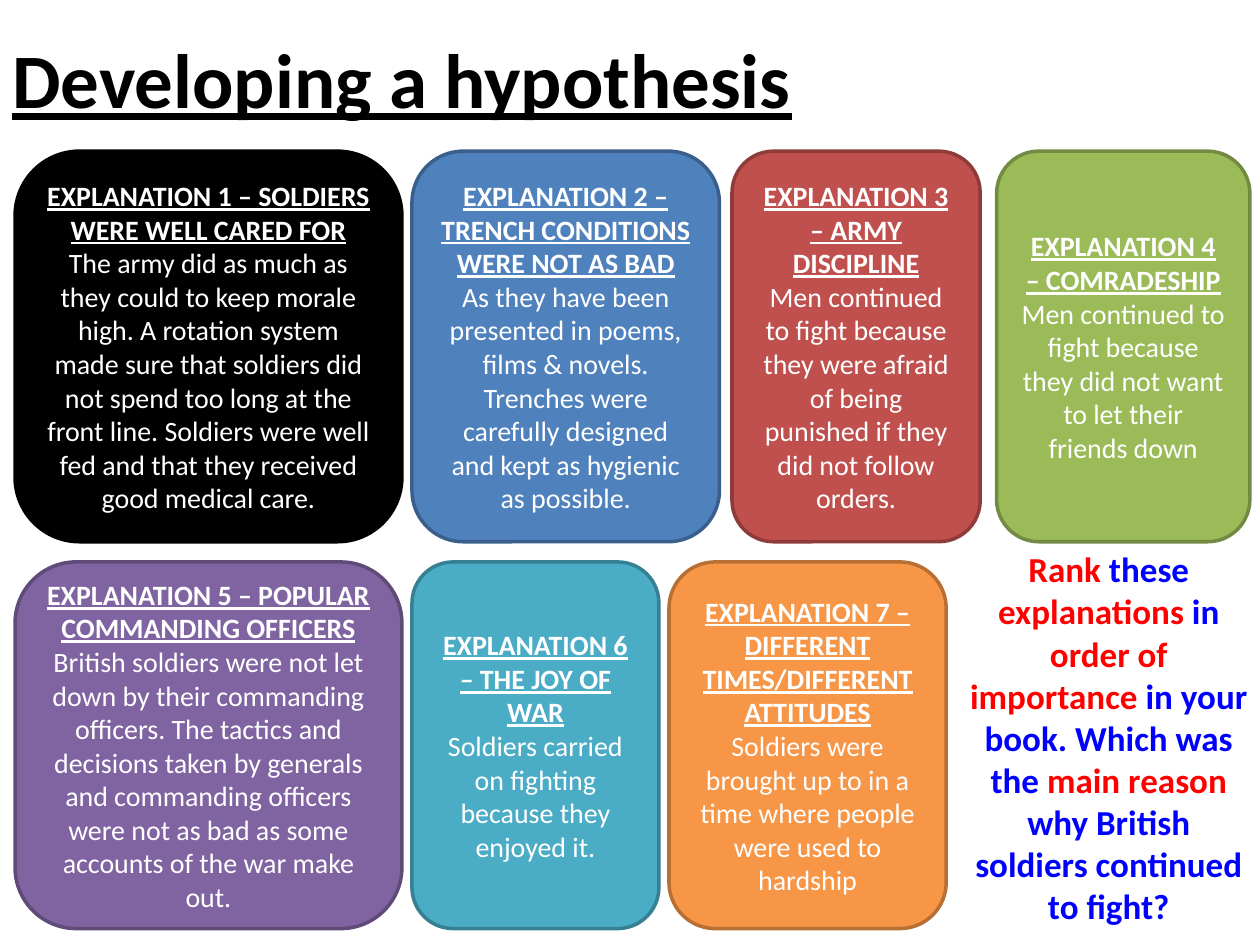
from pptx import Presentation
from pptx import util as u
from pptx.dml.color import RGBColor
from pptx.enum import shapes, text

COLUMNS, ROWS = 100, 75
COLOURS = {
    "black": "000000", "white": "FFFFFF", "red": "FF0000", "blue": "0000FF",
    "steel": "4F81BD", "steel edge": "3A5F8C",
    "brick": "C0504D", "brick edge": "8E3B39",
    "olive": "9BBB59", "olive edge": "738A42",
    "purple": "8064A2", "purple edge": "5F4A78",
    "teal": "4BACC6", "teal edge": "377F92",
    "orange": "F79646", "orange edge": "B76F34",
    "black edge": "000000",
}

# Each row: top, height, then cards of (left, width, colour, heading, body)
CARD_ROWS = [
    (12, 31, [
        (1.2, 30.7, "black", "EXPLANATION 1 – SOLDIERS WERE WELL CARED FOR",
         "The army did as much as they could to keep morale high. A rotation system made sure "
         "that soldiers did not spend too long at the front line. Soldiers were well fed and "
         "that they received good medical care."),
        (32.7, 24.4, "steel", "EXPLANATION 2 – TRENCH CONDITIONS WERE NOT AS BAD",
         "As they have been presented in poems, films & novels. Trenches were carefully "
         "designed and kept as hygienic as possible."),
        (58.1, 19.7, "brick", "EXPLANATION 3 – ARMY DISCIPLINE",
         "Men continued to fight because they were afraid of being punished if they did not "
         "follow orders."),
        (79.1, 20.1, "olive", "EXPLANATION 4 – COMRADESHIP",
         "Men continued to fight because they did not want to let their friends down"),
    ]),
    (44.6, 29.1, [
        (1.2, 30.7, "purple", "EXPLANATION 5 – POPULAR COMMANDING OFFICERS",
         "British soldiers were not let down by their commanding officers. The tactics and "
         "decisions taken by generals and commanding officers were not as bad as some "
         "accounts of the war make out."),
        (32.7, 19.6, "teal", "EXPLANATION 6 – THE JOY OF WAR",
         "Soldiers carried on fighting because they enjoyed it."),
        (53.1, 22, "orange", "EXPLANATION 7 – DIFFERENT TIMES/DIFFERENT ATTITUDES",
         "Soldiers were brought up to in a time where people were used to hardship"),
    ]),
]

TASK = [
    ("Rank", "red"), (" these ", "blue"), ("explanations", "red"), (" in ", "blue"),
    ("order of importance ", "red"), ("in your book. Which was the ", "blue"),
    ("main reason ", "red"), ("why British soldiers continued to fight?", "blue"),
]


def rgb(name):
    return RGBColor.from_string(COLOURS[name])


class Board:
    """Holds the style and the slide; lengths are grid columns and rows."""
    font = "Calibri"
    title_size, task_size, card_size = 44, 20, 16
    edge_width = 2

    def __init__(self, deck):
        self.column = deck.slide_width / COLUMNS
        self.row = deck.slide_height / ROWS
        self.slide = deck.slides.add_slide(deck.slide_layouts[6])

    def area(self, left, top, width, height):
        return (round(left * self.column), round(top * self.row),
                round(width * self.column), round(height * self.row))

    def run(self, paragraph, words, size, colour, bold=True, underline=False):
        run = paragraph.add_run()
        run.text = words
        font = run.font
        font.name, font.size = self.font, u.Pt(size)
        font.bold, font.underline = bold, underline
        font.color.rgb = rgb(colour)

    def text_frame(self, area, anchor):
        frame = self.slide.shapes.add_textbox(*self.area(*area)).text_frame
        frame.word_wrap = True
        frame.vertical_anchor = anchor
        return frame

    def title(self, area, words):
        frame = self.text_frame(area, text.MSO_ANCHOR.MIDDLE)
        self.run(frame.paragraphs[0], words, self.title_size, "black", underline=True)

    def task(self, area, parts):
        frame = self.text_frame(area, text.MSO_ANCHOR.TOP)
        frame.auto_size = text.MSO_AUTO_SIZE.SHAPE_TO_FIT_TEXT
        question = frame.paragraphs[0]
        question.alignment = text.PP_ALIGN.CENTER
        for words, colour in parts:
            self.run(question, words, self.task_size, colour)

    def card(self, area, colour, heading, body):
        card = self.slide.shapes.add_shape(
            shapes.MSO_SHAPE.ROUNDED_RECTANGLE, *self.area(*area))
        card.shadow.inherit = False
        card.fill.solid()
        card.fill.fore_color.rgb = rgb(colour)
        card.line.color.rgb = rgb(colour + " edge")
        card.line.width = u.Pt(self.edge_width)
        frame = card.text_frame
        frame.word_wrap = True
        frame.vertical_anchor = text.MSO_ANCHOR.MIDDLE
        lines = [(frame.paragraphs[0], heading, True), (frame.add_paragraph(), body, False)]
        for paragraph, words, strong in lines:
            paragraph.alignment = text.PP_ALIGN.CENTER
            self.run(paragraph, words, self.card_size, "white", strong, strong)


def main():
    deck = Presentation()
    deck.slide_width, deck.slide_height = u.Inches(10), u.Inches(7.5)
    board = Board(deck)
    board.title((0, 0.1, 100, 12.2), "Developing a hypothesis")
    for top, height, cards in CARD_ROWS:
        for left, width, colour, heading, body in cards:
            board.card((left, top, width, height), colour, heading, body)
    board.task((76, 43, 24, 31.3), TASK)
    deck.save("out.pptx")


if __name__ == "__main__":
    main()
